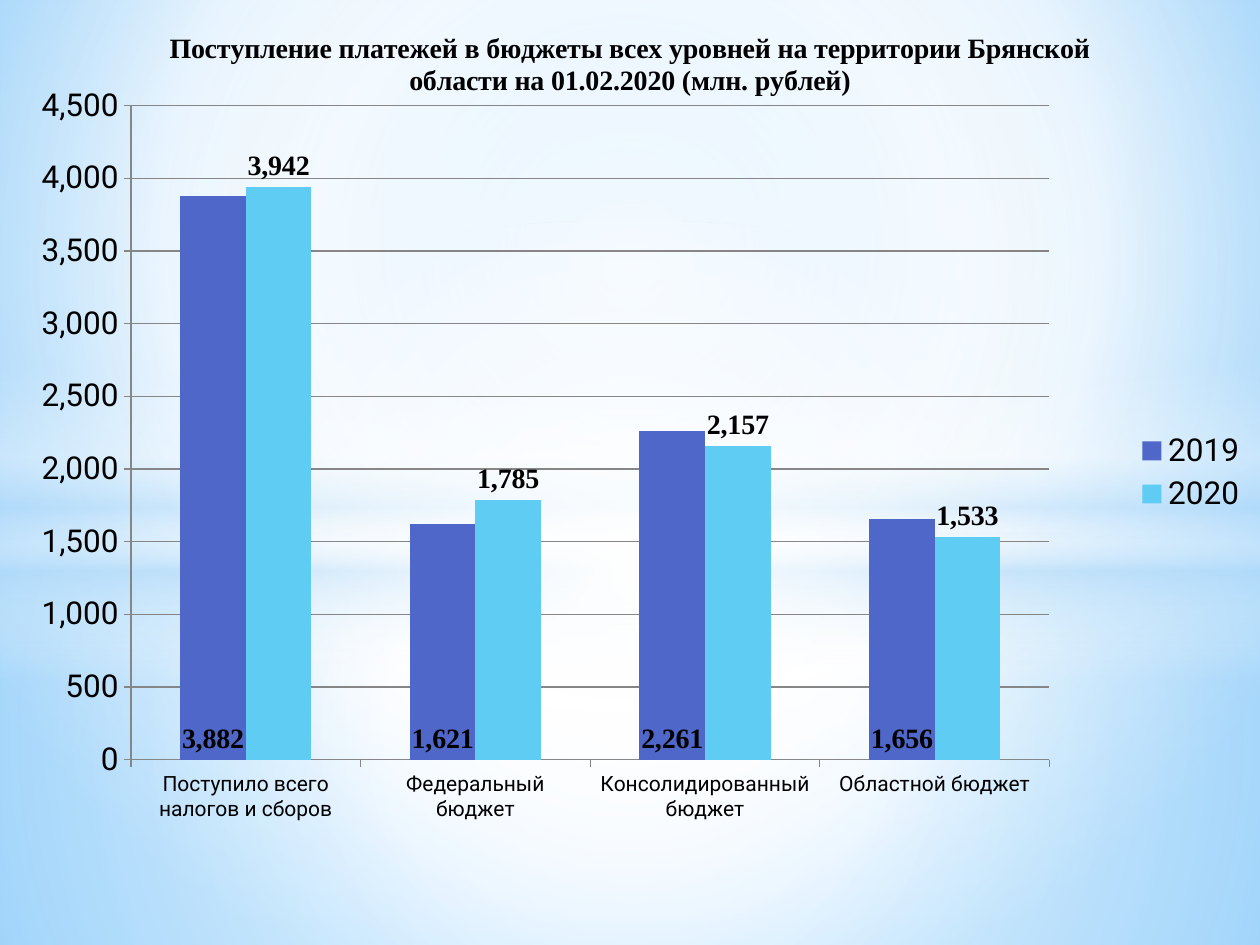
from dataclasses import dataclass

from lxml import etree
from pptx import Presentation
from pptx import util as u
from pptx.chart.data import CategoryChartData
from pptx.dml.color import RGBColor
from pptx.enum import chart as charts, shapes
from pptx.oxml import parse_xml
from pptx.oxml.ns import nsdecls, qn


@dataclass(frozen=True)
class Theme:
    ink: str = "000000"
    line: str = "868686"
    earlier: str = "4E67C8"
    later: str = "5ECCF3"
    sky: str = "9ED5FF"
    deep: str = "5BB9FF"
    mist: str = "B4DCFA"
    white: str = "FFFFFF"
    body_font: str = "Roboto"
    title_font: str = "Times New Roman"
    body_size: int = 18
    label_size: int = 16
    category_size: int = 12


THEME = Theme()
CENTRE = (50, 50, 50, 50)
TITLE = ("Поступление платежей в бюджеты всех уровней на территории "
         "Брянской области на 01.02.2020 (млн. рублей)")
CATEGORIES = ["Поступило всего налогов и сборов", "Федеральный бюджет",
              "Консолидированный бюджет", "Областной бюджет"]
POSITION = charts.XL_LABEL_POSITION
SERIES = [
    ("2019", (3882, 1621, 2261, 1656), THEME.earlier, POSITION.INSIDE_BASE),
    ("2020", (3942, 1785, 2157, 1533), THEME.later, POSITION.OUTSIDE_END),
]
PLOT_AREA = {"x": 0.104, "y": 0.112, "w": 0.729, "h": 0.692}


def set_attributes(target, values):
    for name, value in values.items():
        setattr(target, name, value)


def style_font(font, size, family=THEME.body_font, bold=False):
    set_attributes(font, {"size": u.Pt(size), "name": family, "bold": bold})
    font.color.rgb = RGBColor.from_string(THEME.ink)


def gradient(stops, focus=None):
    """Radial when a focus rectangle is given, otherwise top to bottom.

    Each stop is (position, colour, opacity), all in percent.
    """
    marks = "".join(
        f'<a:gs pos="{position * 1000}"><a:srgbClr val="{colour}">'
        f'<a:alpha val="{opacity * 1000}"/></a:srgbClr></a:gs>'
        for position, colour, opacity in stops)
    if focus:
        sides = " ".join(f'{side}="{value * 1000}"'
                         for side, value in zip("ltrb", focus))
        direction = f'<a:path path="circle"><a:fillToRect {sides}/></a:path>'
    else:
        direction = '<a:lin ang="5400000" scaled="0"/>'
    return parse_xml(f'<a:gradFill {nsdecls("a")} rotWithShape="1">'
                     f'<a:gsLst>{marks}</a:gsLst>{direction}</a:gradFill>')


def swap_solid_fill(parent, fill):
    solid = parent.find(".//" + qn("a:solidFill"))
    solid.getparent().replace(solid, fill)


def add_glow(page, kind, box, stops, focus):
    glow = page.shapes.add_shape(kind, *(u.Inches(side) for side in box))
    glow.shadow.inherit = False
    glow.line.fill.background()
    glow.fill.solid()
    swap_solid_fill(glow._element.spPr, gradient(stops, focus))


def build_backdrop(page, box):
    left, top, width, height = box
    white, mist = THEME.white, THEME.mist
    horizon = 4.23

    # Page background
    page.background.fill.solid()
    swap_solid_fill(page._element, gradient(
        [(0, THEME.sky, 100), (60, white, 100), (100, THEME.deep, 100)],
        (20, 10, 20, 60)))

    # Ground, sky, horizon band and central light
    rectangle, oval = shapes.MSO_SHAPE.RECTANGLE, shapes.MSO_SHAPE.OVAL
    glows = [
        (rectangle, (left, top + horizon, width, height - horizon),
         [(0, white, 91), (37, white, 76), (100, mist, 79)], CENTRE),
        (rectangle, (left, top, width, horizon),
         [(0, white, 89), (48, white, 62), (100, mist, 79)], CENTRE),
        (rectangle, (left, top + 2.9, width, 2.5),
         [(0, white, 0), (29, white, 30), (45, mist, 40), (55, white, 26),
          (65, mist, 60), (100, white, 0)], None),
        (oval, (left, top + 1.75, width, 5.58),
         [(0, white, 100), (54, white, 0)], CENTRE),
    ]
    for glow in glows:
        add_glow(page, *glow)


def fix_plot_area(chart):
    plot_area = chart._chartSpace.chart.plotArea
    for old in plot_area.findall(qn("c:layout")):
        plot_area.remove(old)
    layout = etree.Element(qn("c:layout"))
    manual = etree.SubElement(layout, qn("c:manualLayout"))
    settings = {"layoutTarget": "inner", "xMode": "edge", "yMode": "edge",
                **PLOT_AREA}
    for name, value in settings.items():
        etree.SubElement(manual, qn(f"c:{name}")).set("val", str(value))
    plot_area.insert(0, layout)


def style_axes(chart):
    grey = RGBColor.from_string(THEME.line)
    for axis, size in ((chart.category_axis, THEME.category_size),
                       (chart.value_axis, THEME.body_size)):
        set_attributes(axis, {"major_tick_mark": charts.XL_TICK_MARK.OUTSIDE,
                              "minor_tick_mark": charts.XL_TICK_MARK.NONE})
        style_font(axis.tick_labels.font, size)
        axis.format.line.color.rgb = grey
    set_attributes(chart.value_axis, {"has_major_gridlines": True,
                                      "minimum_scale": 0,
                                      "maximum_scale": 4500,
                                      "major_unit": 500})
    chart.value_axis.major_gridlines.format.line.color.rgb = grey
    set_attributes(chart.value_axis.tick_labels,
                   {"number_format": "#,##0", "number_format_is_linked": False})


def build_chart(page, box):
    data = CategoryChartData(number_format="#,##0")
    data.categories = CATEGORIES
    for name, values, _, _ in SERIES:
        data.add_series(name, values)
    chart = page.shapes.add_chart(
        charts.XL_CHART_TYPE.COLUMN_CLUSTERED,
        *(u.Inches(side) for side in box), data).chart
    style_font(chart.font, THEME.body_size)

    # Title
    chart.has_title = True
    para = chart.chart_title.text_frame.paragraphs[0]
    span = para.add_run()
    span.text = TITLE
    style_font(span.font, THEME.label_size, THEME.title_font, bold=True)

    # Legend
    chart.has_legend = True
    set_attributes(chart.legend, {"position": charts.XL_LEGEND_POSITION.RIGHT,
                                  "include_in_layout": False})
    style_font(chart.legend.font, THEME.body_size)

    # Columns and their values
    plot = chart.plots[0]
    set_attributes(plot, {"gap_width": 150, "overlap": 0,
                          "vary_by_categories": False})
    for series, (_, _, colour, position) in zip(plot.series, SERIES):
        series.format.fill.solid()
        series.format.fill.fore_color.rgb = RGBColor.from_string(colour)
        labels = series.data_labels
        set_attributes(labels, {"show_value": True, "position": position,
                                "number_format": "#,##0",
                                "number_format_is_linked": False})
        style_font(labels.font, THEME.label_size, THEME.title_font, bold=True)

    style_axes(chart)
    fix_plot_area(chart)


def main():
    deck = Presentation()
    set_attributes(deck, {"slide_width": u.Inches(10),
                          "slide_height": u.Inches(7.5)})
    page = deck.slides.add_slide(deck.slide_layouts[6])
    full_page = (0, 0, 10, 7.5)
    build_backdrop(page, full_page)
    build_chart(page, full_page)
    deck.save("out.pptx")


if __name__ == "__main__":
    main()
